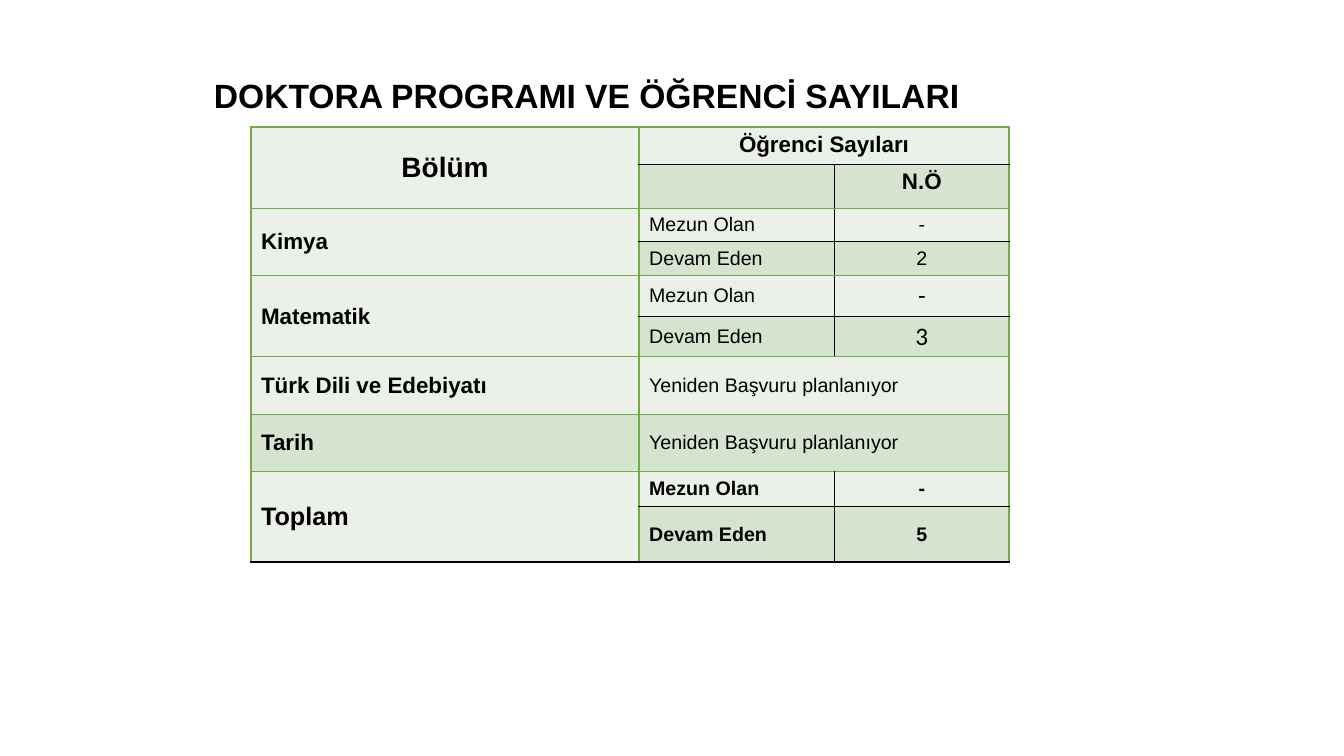
"""Build the slide of doctoral programmes and student counts."""
from lxml.etree import SubElement
from pptx import Presentation
from pptx.dml.color import RGBColor
from pptx.enum.text import MSO_ANCHOR as ANCHOR, PP_ALIGN as ALIGN
from pptx.oxml.ns import qn
from pptx.util import Pt

BLACK = RGBColor(0x00, 0x00, 0x00)
GREEN = RGBColor(0x70, 0xAD, 0x47)
PALE = RGBColor(0xEB, 0xF1, 0xE9)
SAGE = RGBColor(0xD5, 0xE3, 0xCF)

TITLE = "DOKTORA PROGRAMI VE ÖĞRENCİ SAYILARI"
TITLE_BOX = (133.2, 49.7, 571.7, 36)
TABLE_AT = (179.3, 90.7)
COLS = (277.2, 139.7, 124.6)
ROWS = (26.8, 31, 23.6, 24.3, 28.9, 28.9, 41, 41, 25, 39.6)
BLACK_ROW_EDGES = (1, 3, 5, 9, 10)
BLACK_COL_EDGES = (2,)
SAGE_ROWS = (1, 3, 5, 7, 9)

PLAIN = {"size": Pt(14), "bold": False, "name": "Arial"}
BOLD = {**PLAIN, "bold": True}
DEPARTMENT = {**BOLD, "size": Pt(16)}
TOTAL = {**BOLD, "size": Pt(18)}
HEADING = {**BOLD, "size": Pt(20)}
LARGE_COUNT = {**PLAIN, "size": Pt(18), "name": "Calibri"}
TITLE_FONT = {**BOLD, "size": Pt(24)}

# row, column, row span, column span, text, font, alignment, anchor
BLOCKS = [
    (0, 0, 2, 1, "Bölüm", HEADING, ALIGN.CENTER, ANCHOR.MIDDLE),
    (0, 1, 1, 2, "Öğrenci Sayıları", DEPARTMENT, ALIGN.CENTER, ANCHOR.TOP),
    (1, 1, 1, 1, "", DEPARTMENT, ALIGN.LEFT, ANCHOR.TOP),
    (1, 2, 1, 1, "N.Ö", DEPARTMENT, ALIGN.CENTER, ANCHOR.TOP),
]
PAIRS = [
    (2, "Kimya", DEPARTMENT, PLAIN, PLAIN, ("-", "2")),
    (4, "Matematik", DEPARTMENT, PLAIN, LARGE_COUNT, ("-", "3")),
    (8, "Toplam", TOTAL, BOLD, BOLD, ("-", "5")),
]
PLANNED = [(6, "Türk Dili ve Edebiyatı"), (7, "Tarih")]

for row, name, name_font, label_font, count_font, counts in PAIRS:
    BLOCKS.append((row, 0, 2, 1, name, name_font, ALIGN.LEFT, ANCHOR.MIDDLE))
    for i, label in enumerate(("Mezun Olan", "Devam Eden")):
        BLOCKS.append((row + i, 1, 1, 1, label, label_font, ALIGN.LEFT, ANCHOR.MIDDLE))
        BLOCKS.append((row + i, 2, 1, 1, counts[i], count_font, ALIGN.CENTER, ANCHOR.MIDDLE))
for row, name in PLANNED:
    BLOCKS.append((row, 0, 1, 1, name, DEPARTMENT, ALIGN.LEFT, ANCHOR.MIDDLE))
    BLOCKS.append((row, 1, 1, 2, "Yeniden Başvuru planlanıyor", PLAIN, ALIGN.LEFT, ANCHOR.MIDDLE))


def write(p, text, font, align):
    p.alignment = align
    if text:
        r = p.add_run()
        r.text = text
        for key, value in font.items():
            setattr(r.font, key, value)
        r.font.color.rgb = BLACK


def add_border(cell, side, color):
    ln = SubElement(cell._tc.get_or_add_tcPr(), qn("a:ln" + side), w=str(Pt(1)))
    SubElement(SubElement(ln, qn("a:solidFill")), qn("a:srgbClr"), val=str(color))


def style_block(table, row, col, row_span, col_span):
    bottom, right = row + row_span, col + col_span
    edges = {
        "L": GREEN if col not in BLACK_COL_EDGES else BLACK,
        "R": GREEN if right not in BLACK_COL_EDGES else BLACK,
        "T": GREEN if row not in BLACK_ROW_EDGES else BLACK,
        "B": GREEN if bottom not in BLACK_ROW_EDGES else BLACK,
    }
    for y in range(row, bottom):
        for x in range(col, right):
            cell = table.cell(y, x)
            on_edge = {"L": x == col, "R": x == right - 1, "T": y == row, "B": y == bottom - 1}
            for side, color in edges.items():
                if on_edge[side] or (y, x) == (row, col):
                    add_border(cell, side, color)
            cell.fill.solid()
            cell.fill.fore_color.rgb = SAGE if row in SAGE_ROWS else PALE


def main():
    prs = Presentation()
    prs.slide_width, prs.slide_height = Pt(960), Pt(540)
    s = prs.slides.add_slide(prs.slide_layouts[6])

    tf = s.shapes.add_textbox(*map(Pt, TITLE_BOX)).text_frame
    tf.word_wrap = True
    write(tf.paragraphs[0], TITLE, TITLE_FONT, ALIGN.CENTER)

    size = (sum(COLS), sum(ROWS))
    table = s.shapes.add_table(len(ROWS), len(COLS), *map(Pt, TABLE_AT + size)).table
    table.first_row = table.horz_banding = False
    for column, width in zip(table.columns, COLS):
        column.width = Pt(width)
    for line, height in zip(table.rows, ROWS):
        line.height = Pt(height)

    for row, col, row_span, col_span, text, font, align, anchor in BLOCKS:
        cell = table.cell(row, col)
        if row_span * col_span > 1:
            cell.merge(table.cell(row + row_span - 1, col + col_span - 1))
        cell.vertical_anchor = anchor
        write(cell.text_frame.paragraphs[0], text, font, align)
        style_block(table, row, col, row_span, col_span)

    prs.save("out.pptx")


if __name__ == "__main__":
    main()
